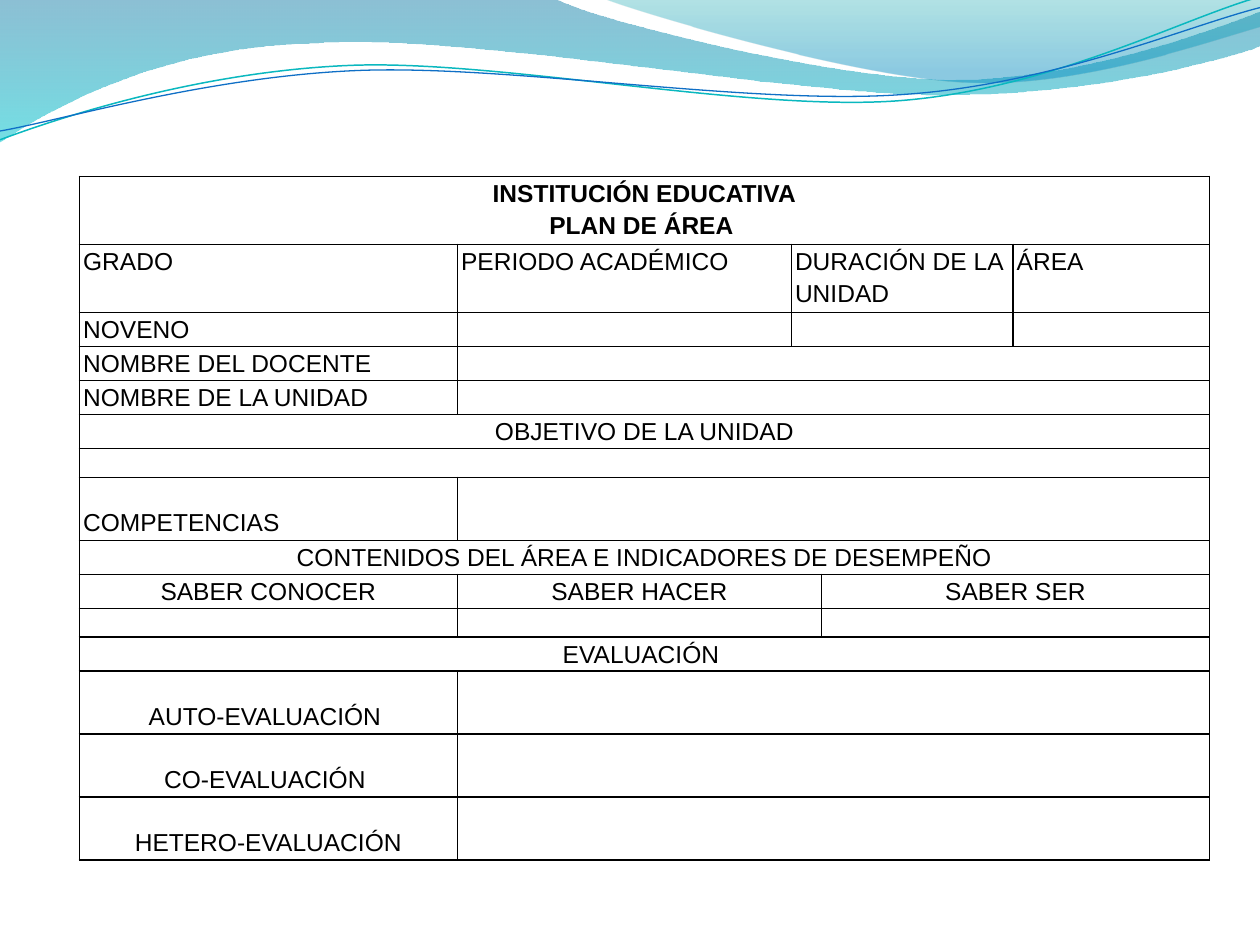
import math
from lxml import etree
from pptx import Presentation, util as u
from pptx.dml.color import RGBColor
from pptx.enum import text
from pptx.oxml import ns

COLUMNS = [3, 2.65, 0.24, 1.52, 1.56]
LINE, GAP, TALL, DOUBLE = 0.27, 0.23, 0.5, 0.54
LOWERED = 0.22
LEFT, CENTER = text.PP_ALIGN.LEFT, text.PP_ALIGN.CENTER

PLAN = [
    (DOUBLE, CENTER, [("INSTITUCIÓN EDUCATIVA\nPLAN DE ÁREA ", 5)]),
    (DOUBLE, LEFT, [("GRADO", 1), ("PERIODO ACADÉMICO", 1),
                    ("DURACIÓN DE LA UNIDAD", 2), ("ÁREA", 1)]),
    (LINE, LEFT, [("NOVENO", 1), ("", 1), ("", 2), ("", 1)]),
    (LINE, LEFT, [("NOMBRE DEL DOCENTE", 1), ("", 4)]),
    (LINE, LEFT, [("NOMBRE DE LA UNIDAD", 1), ("", 4)]),
    (LINE, CENTER, [("OBJETIVO DE LA UNIDAD", 5)]),
    (GAP, LEFT, [("", 5)]),
    (TALL, LEFT, [("COMPETENCIAS", 1), ("", 4)]),
    (LINE, CENTER, [("CONTENIDOS DEL ÁREA E INDICADORES DE DESEMPEÑO", 5)]),
    (LINE, CENTER, [("SABER CONOCER", 1), ("SABER HACER", 2), ("SABER SER", 2)]),
    (GAP, LEFT, [("", 1), ("", 2), ("", 2)]),
    (LINE, CENTER, [("EVALUACIÓN ", 5)]),
    (TALL, CENTER, [("AUTO-EVALUACIÓN ", 1), ("", 4)]),
    (TALL, CENTER, [("CO-EVALUACIÓN ", 1), ("", 4)]),
    (TALL, CENTER, [("HETERO-EVALUACIÓN", 1), ("", 4)]),
]

BANDS = [
    ((-0.01, -0.01, 10.02, 1.14),
     [(0, 0), (4.4, -0.01), (4.76, 0.17, 6.64, 0.63, 7.58, 0.63),
      (8.53, 0.63, 9.58, 0.26, 10, 0.09), (10.01, 0.36),
      (9.83, 0.44, 8.7, 0.76, 7.46, 0.75), (6.22, 0.75, 3.82, 0.28, 2.57, 0.34),
      (1.29, 0.36, 0.46, 0.83, -0.01, 1.13), (0, 0)],
     [(0, "0074A1", 45), (1, "00C6CF", 55)]),
    ((4.79, -0.01, 5.21, 0.7),
     [(4.79, -0.01), (5.09, 0.11, 6.82, 0.62, 7.69, 0.65),
      (8.56, 0.69, 9.61, 0.32, 10, 0.21), (10, 0), (4.79, -0.01)],
     [(0, "00A1A9", 30), (0.8, "008BBF", 45)]),
]
STRANDS = [
    ((-0.02, 0.22, 10.02, 0.71),
     [(0, 1.11), (0.48, 0.93, 1.58, 0.57, 2.77, 0.52),
      (3.95, 0.47, 5.93, 0.89, 7.13, 0.8), (8.33, 0.71, 9.38, 0.15, 9.98, -0.02)],
     "0AB8BF", 0.85),
    ((-0.02, 0.3, 10.03, 0.58),
     [(0, 1.04), (0.47, 0.96, 1.64, 0.61, 2.83, 0.56),
      (4.03, 0.51, 5.97, 0.84, 7.17, 0.75), (8.36, 0.67, 9.41, 0.21, 10, 0.06)],
     "0F6FC6", 0.75),
]


def color(code):
    """Turn a hex string into a colour."""
    return RGBColor.from_string(code)


def to_local(x, y, box, tilt):
    """Turn a slide point back by the tilt and measure it from the box corner."""
    left, top, width, height = box
    dx, dy = x - left - width / 2, y - top - height / 2
    turn = math.radians(-tilt)
    across = dx * math.cos(turn) - dy * math.sin(turn) + width / 2
    down = dx * math.sin(turn) + dy * math.cos(turn) + height / 2
    return u.Inches(across), u.Inches(down)


def add_wave(slide, box, outline, closed=False, tilt=0):
    """Draw an outline of straight steps and Bézier curves as a freeform."""
    builder = slide.shapes.build_freeform(0, 0)
    builder.add_line_segments([(u.Inches(box[2]), u.Inches(box[3]))], close=closed)
    wave = builder.convert_to_shape()
    wave.left, wave.top, wave.width, wave.height = map(u.Inches, box)
    wave.rotation = tilt
    wave.shadow.inherit = False
    route = next(wave._element.iter(ns.qn("a:path")))
    for child in list(route):
        route.remove(child)
    for index, step in enumerate(outline):
        kind = "cubicBezTo" if len(step) == 6 else "lnTo" if index else "moveTo"
        segment = etree.SubElement(route, ns.qn("a:" + kind))
        for x, y in zip(step[::2], step[1::2]):
            across, down = to_local(x, y, box, tilt)
            etree.SubElement(segment, ns.qn("a:pt"), x=str(int(across)), y=str(int(down)))
    if closed:
        etree.SubElement(route, ns.qn("a:close"))
    return wave


def add_band(slide, box, outline, stops):
    """Draw a closed wave with a translucent gradient running downwards."""
    band = add_wave(slide, box, outline, closed=True)
    band.line.fill.background()
    band.fill.gradient()
    band.fill.gradient_angle = 270
    for stop, (position, code, _) in zip(band.fill.gradient_stops, stops):
        stop.position = position
        stop.color.rgb = color(code)
    tints = list(band._element.spPr.iter(ns.qn("a:srgbClr")))
    for tint, (_, _, opacity) in zip(tints, stops):
        etree.SubElement(tint, ns.qn("a:alpha"), val=str(opacity * 1000))


def add_strand(slide, box, outline, code, width):
    """Draw an open, slightly tilted wave as a thin line."""
    strand = add_wave(slide, box, outline, tilt=-2.7)
    strand.fill.background()
    strand.line.color.rgb = color(code)
    strand.line.width = u.Pt(width)


def write(cell, label, align=LEFT, bold=False, size=14):
    """Put a label in a cell, one paragraph a line."""
    frame = cell.text_frame
    frame.text = label
    for paragraph in frame.paragraphs:
        paragraph.alignment = align
        if not label:
            etree.SubElement(paragraph._p, ns.qn("a:endParaRPr"), sz="1200")
            continue
        paragraph.line_spacing = 1.15
        for run in paragraph.runs:
            run.font.name, run.font.size, run.font.bold = "Arial", u.Pt(size), bold
            run.font.color.rgb = color("000000")


def frame_cell(cell, code="000000", width=1):
    """Give a cell narrow margins, no fill and a border on each side."""
    cell.margin_left = cell.margin_right = u.Inches(0.03)
    cell.margin_top = cell.margin_bottom = 0
    cell.fill.background()
    properties = cell._tc.get_or_add_tcPr()
    for index, side in enumerate(("lnL", "lnR", "lnT", "lnB")):
        border = etree.Element(ns.qn("a:" + side), w=str(u.Pt(width)))
        fill = etree.SubElement(border, ns.qn("a:solidFill"))
        etree.SubElement(fill, ns.qn("a:srgbClr"), val=code)
        properties.insert(index, border)


def add_plan(slide, left, top):
    """Build the area plan table."""
    height = sum(row[0] for row in PLAN)
    plan = slide.shapes.add_table(
        len(PLAN), len(COLUMNS), u.Inches(left), u.Inches(top),
        u.Inches(sum(COLUMNS)), u.Inches(height)).table
    plan.first_row = plan.horz_banding = False
    for column, width in zip(plan.columns, COLUMNS):
        column.width = u.Inches(width)
    for cell in plan.iter_cells():
        frame_cell(cell)
    for r, (row_height, align, entries) in enumerate(PLAN):
        plan.rows[r].height = u.Inches(row_height)
        c = 0
        for label, span in entries:
            cell = plan.cell(r, c)
            if span > 1:
                cell.merge(plan.cell(r, c + span - 1))
            if label and row_height == TALL:
                cell.margin_top = u.Inches(LOWERED)
            write(cell, label, align=align, bold=r == 0)
            c += span


def main():
    """Build the slide and save it."""
    deck = Presentation()
    deck.slide_width, deck.slide_height = u.Inches(10), u.Inches(7.5)
    slide = deck.slides.add_slide(deck.slide_layouts[6])
    for band in BANDS:
        add_band(slide, *band)
    for strand in STRANDS:
        add_strand(slide, *strand)
    add_plan(slide, 0.63, 1.4)
    deck.save("out.pptx")


if __name__ == "__main__":
    main()
